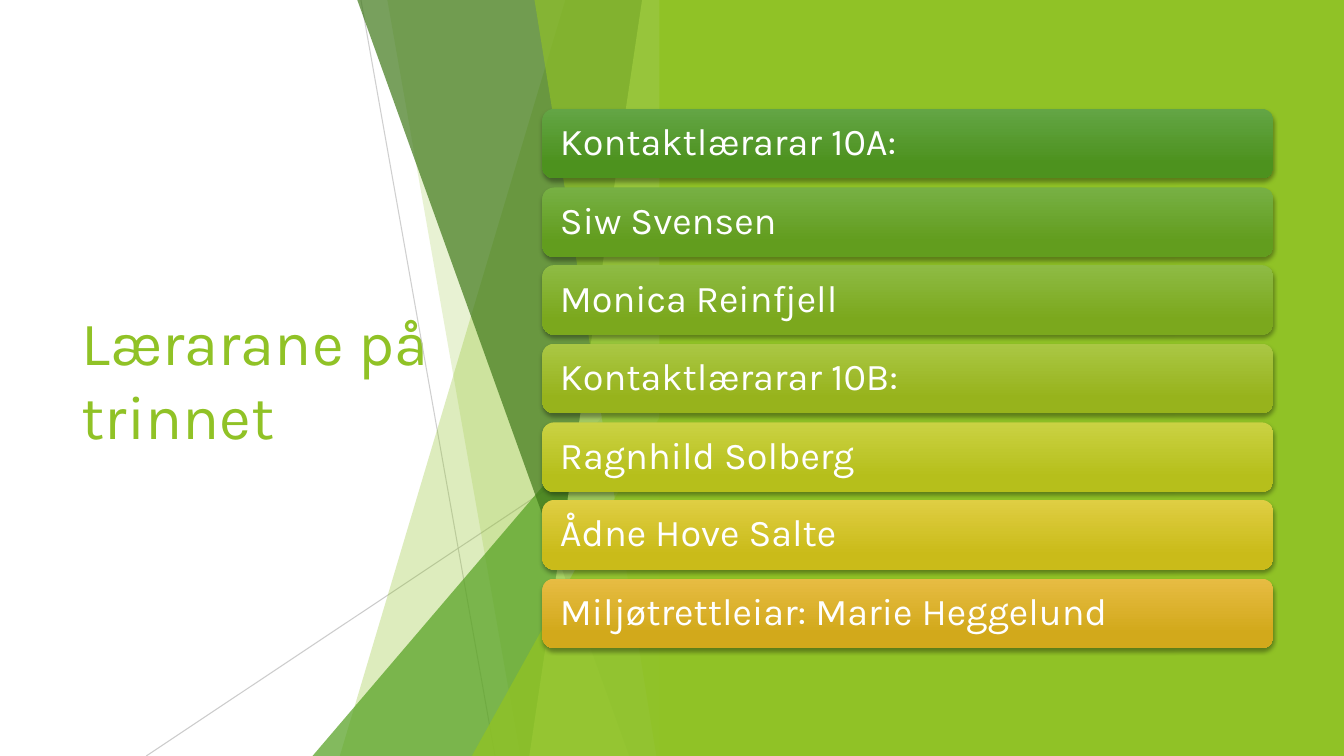
from lxml.etree import SubElement
from pptx import Presentation
from pptx.dml.color import RGBColor
from pptx.enum.shapes import MSO_CONNECTOR, MSO_SHAPE
from pptx.enum.text import MSO_ANCHOR, MSO_AUTO_SIZE, PP_ALIGN
from pptx.oxml.ns import qn
from pptx.util import Pt

PX = 9144
WIDE, HIGH = 1333, 750
EDGE = 666
FONT = "Karla"
LEFT = PP_ALIGN.LEFT
MIDDLE = MSO_ANCHOR.MIDDLE
FIXED = MSO_AUTO_SIZE.NONE
STRAIGHT = MSO_CONNECTOR.STRAIGHT
RECT = MSO_SHAPE.RECTANGLE
ROUND = MSO_SHAPE.ROUNDED_RECTANGLE
WEDGE = MSO_SHAPE.ISOSCELES_TRIANGLE

WHITE = RGBColor(0xFF, 0xFF, 0xFF)
BLACK = RGBColor(0x00, 0x00, 0x00)
GREY = RGBColor(0xBF, 0xBF, 0xBF)
LIME = RGBColor(0x90, 0xC2, 0x26)
GREEN = RGBColor(0x54, 0xA0, 0x21)
FOREST = RGBColor(0x3F, 0x78, 0x19)
PALE = RGBColor(0xC0, 0xE4, 0x74)

BARS = [
    ("Kontaktlærarar 10A:", RGBColor(0x63, 0xA5, 0x45), RGBColor(0x4D, 0x92, 0x1E)),
    ("Siw Svensen", RGBColor(0x77, 0xB0, 0x44), RGBColor(0x62, 0x9D, 0x1E)),
    ("Monica Reinfjell", RGBColor(0x8E, 0xBB, 0x44), RGBColor(0x7B, 0xA8, 0x1D)),
    ("Kontaktlærarar 10B:", RGBColor(0xAA, 0xC7, 0x44), RGBColor(0x97, 0xB3, 0x1C)),
    ("Ragnhild Solberg", RGBColor(0xCA, 0xD2, 0x43), RGBColor(0xB6, 0xBF, 0x1B)),
    ("Ådne Hove Salte", RGBColor(0xDF, 0xCE, 0x43), RGBColor(0xCA, 0xBB, 0x19)),
    ("Miljøtrettleiar: Marie Heggelund", RGBColor(0xE7, 0xBC, 0x43), RGBColor(0xD2, 0xA9, 0x1B)),
]


def write(shape, text, size, color, inset=(10, 5), spacing=1.0):
    """Put formatted text in a shape."""
    frame = shape.text_frame
    frame.word_wrap = True
    frame.auto_size = FIXED
    frame.vertical_anchor = MIDDLE
    side, edge = (n * PX for n in inset)
    frame.margin_left = frame.margin_right = side
    frame.margin_top = frame.margin_bottom = edge
    para = frame.paragraphs[0]
    para.alignment = LEFT
    para.line_spacing = spacing
    run = para.add_run()
    run.text = text
    run.font.name = FONT
    run.font.size = Pt(size)
    run.font.color.rgb = color


def fade(shape, alpha):
    """Set the opacity percentage of the colour of a shape."""
    tint = shape._element.spPr.find(".//" + qn("a:srgbClr"))
    SubElement(tint, qn("a:alpha"), val=str(alpha * 1000))


class Page:
    """Draw elements on one slide, in px."""

    def __init__(self, deck):
        """Add a title-only slide to the deck."""
        self.slide = deck.slides.add_slide(deck.slide_layouts[5])
        self.shapes = self.slide.shapes

    def title(self, text, box):
        """Place and fill the title."""
        head = self.shapes.title
        head.left, head.top, head.width, head.height = (n * PX for n in box)
        write(head, text, size=44, color=LIME)

    def line(self, start, end, alpha):
        """Draw a thin grey line."""
        ends = [n * PX for n in start + end]
        line = self.shapes.add_connector(STRAIGHT, *ends)
        line.line.color.rgb = GREY
        line.line.width = Pt(0.75)
        fade(line, alpha)
        SubElement(line._element.spPr, qn("a:effectLst"))

    def paint(self, shape, color, alpha):
        """Give a shape a flat fill without outline or shadow."""
        shape.fill.solid()
        shape.fill.fore_color.rgb = color
        shape.line.fill.background()
        shape.shadow.inherit = False
        if alpha < 100:
            fade(shape, alpha)

    def facet(self, top, foot, color, alpha, right=EDGE):
        """Draw a full-height panel with a slanted left side."""
        pen = self.shapes.build_freeform(top, -1, scale=PX)
        pen.add_line_segments([(right, -1), (right, HIGH), (foot, HIGH)], close=True)
        self.paint(pen.convert_to_shape(), color, alpha)

    def block(self, kind, box, color, alpha=100):
        """Draw a flat preset shape."""
        shape = self.shapes.add_shape(kind, *(n * PX for n in box))
        self.paint(shape, color, alpha)
        return shape

    def wedge(self, left, top, color, alpha):
        """Draw a right triangle in the lower corner by the edge."""
        box = left, top, EDGE - left, HIGH - top
        self.block(WEDGE, box, color, alpha).adjustments[0] = 1

    def bar(self, text, box, light, dark):
        """Draw a rounded gradient bar with text and a soft shadow."""
        bar = self.block(ROUND, box, light)
        bar.fill.gradient()
        bar.fill.gradient_angle = 270
        for stop, spot, color in zip(bar.fill.gradient_stops, (0, 0.78), (light, dark)):
            stop.position = spot
            stop.color.rgb = color
        list_ = bar._element.spPr.find(qn("a:effectLst"))
        cast = SubElement(list_, qn("a:outerShdw"), blurRad=str(Pt(3)),
                          dist=str(Pt(2)), dir="5400000", rotWithShape="0")
        tint = SubElement(cast, qn("a:srgbClr"), val=str(BLACK))
        SubElement(tint, qn("a:alpha"), val="35000")
        write(bar, text, size=27, color=WHITE, inset=(14, 11), spacing=0.9)


def main():
    """Build and save the slide."""
    deck = Presentation()
    deck.slide_width, deck.slide_height = WIDE * PX, HIGH * PX
    page = Page(deck)
    page.title("Lærarane på trinnet", (71, 151, 388, 448))
    page.line((358, 0), (491, HIGH), 75)
    page.line((EDGE, 403), (145, HIGH), 80)
    page.facet(561, 337, LIME, 30)
    page.facet(384, 516, LIME, 20)
    page.wedge(310, 333, GREEN, 72)
    page.facet(354, 624, FOREST, 70)
    page.facet(637, 525, PALE, 70)
    page.facet(530, 651, LIME, 65)
    page.wedge(468, 393, LIME, 80)
    page.block(RECT, (654, 0, WIDE - 654, HIGH), LIME)
    first, last = 108, 574
    step = (last - first) / (len(BARS) - 1)
    for i, (text, light, dark) in enumerate(BARS):
        page.bar(text, (538, first + round(i * step), 725, 69), light, dark)
    deck.save("out.pptx")


if __name__ == "__main__":
    main()
